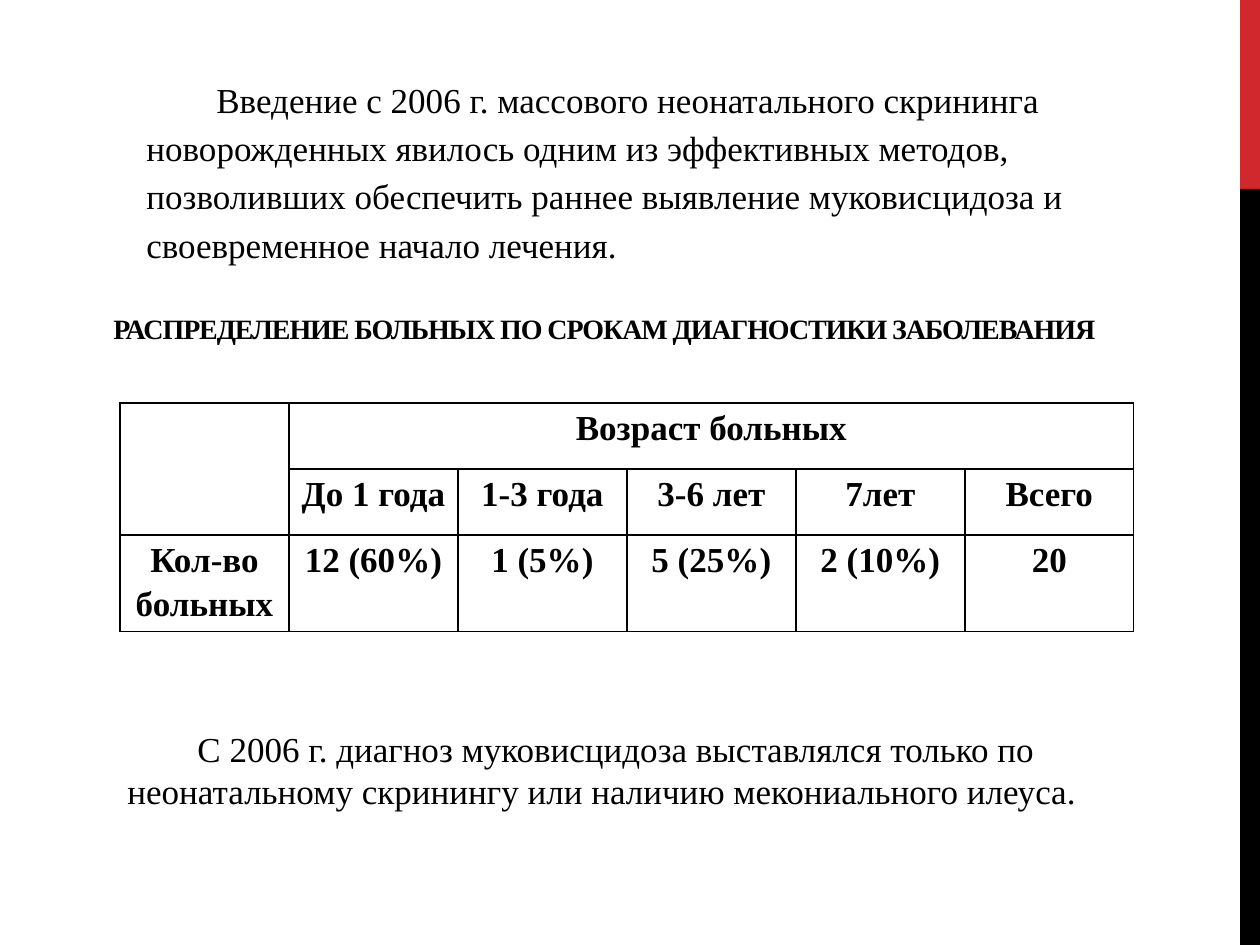
from lxml.etree import SubElement
from pptx import Presentation
from pptx.dml.color import RGBColor
from pptx.enum.shapes import MSO_SHAPE
from pptx.enum.text import PP_ALIGN
from pptx.oxml.ns import qn
from pptx.util import Pt

SCALE = 7257.14  # EMU per px, 126 px to the inch
FONT = "Times New Roman"
BLACK = "000000"
RED = "D1282E"

INTRODUCTION = (
    "Введение с 2006 г. массового неонатального скрининга новорожденных явилось "
    "одним из эффективных методов, позволивших обеспечить раннее выявление "
    "муковисцидоза и своевременное начало лечения."
)
HEADING = "РАСПРЕДЕЛЕНИЕ БОЛЬНЫХ ПО СРОКАМ ДИАГНОСТИКИ ЗАБОЛЕВАНИЯ"
CONCLUSION = (
    "С 2006 г. диагноз муковисцидоза выставлялся только по неонатальному "
    "скринингу или наличию мекониального илеуса."
)
TABLE_ROWS = [
    ["", "Возраст больных", "", "", "", ""],
    ["", "До 1 года", "1-3 года", "3-6 лет", "7лет", "Всего"],
    ["Кол-во больных", "12 (60%)", "1 (5%)", "5 (25%)", "2 (10%)", "20"],
]


def px(length):
    return round(length * SCALE)


def color(value):
    return RGBColor.from_string(value)


def set_attributes(target, values):
    for name, value in values.items():
        setattr(target, name, value)


def write(paragraph, text, size=20, bold=False, **paragraph_format):
    set_attributes(paragraph, paragraph_format)
    run = paragraph.add_run()
    run.text = text
    set_attributes(run.font, {"name": FONT, "size": Pt(size), "bold": bold})
    run.font.color.rgb = color(BLACK)
    return run


def add_bar(slide, top, height, fill):
    shape = slide.shapes.add_shape(
        MSO_SHAPE.RECTANGLE, px(1240), px(top), px(20), px(height))
    shape.shadow.inherit = False
    shape.fill.solid()
    shape.fill.fore_color.rgb = color(fill)
    shape.line.fill.background()


def add_text(slide, box, text, indent=0, inset=6, **text_format):
    shape = slide.shapes.add_textbox(*map(px, box))
    frame = shape.text_frame
    set_attributes(frame, {"word_wrap": True, "margin_top": px(inset)})
    paragraph = frame.paragraphs[0]
    paragraph._p.get_or_add_pPr().set("indent", str(px(indent)))
    return write(paragraph, text, **text_format)


def style_cell(cell):
    """Leave the cell unfilled, with a thin black border on each side."""
    margins = {"margin_left": px(8), "margin_right": px(8),
               "margin_top": 0, "margin_bottom": 0}
    set_attributes(cell, margins)
    properties = cell._tc.get_or_add_tcPr()
    for side in ("a:lnL", "a:lnR", "a:lnT", "a:lnB"):
        line = SubElement(properties, qn(side), w=str(Pt(1)))
        fill = SubElement(line, qn("a:solidFill"))
        SubElement(fill, qn("a:srgbClr"), val=BLACK)
    cell.fill.background()


def add_table(slide, rows):
    row_height, column_width = 66, 169
    row_count, column_count = len(rows), len(rows[0])
    table = slide.shapes.add_table(
        row_count, column_count, px(120), px(403),
        px(column_width * column_count), px(row_height * row_count)).table
    set_attributes(table, {"first_row": False, "horz_banding": False})
    table.cell(0, 0).merge(table.cell(1, 0))
    table.cell(0, 1).merge(table.cell(0, column_count - 1))
    for row, texts in enumerate(rows):
        for column, text in enumerate(texts):
            cell = table.cell(row, column)
            style_cell(cell)
            if text:
                write(cell.text_frame.paragraphs[0], text, bold=True,
                      alignment=PP_ALIGN.CENTER, line_spacing=1.15)


def main():
    presentation = Presentation()
    set_attributes(presentation, {"slide_width": px(1260), "slide_height": px(945)})
    slide = presentation.slides.add_slide(presentation.slide_layouts[6])

    add_bar(slide, 0, 189, RED)
    add_bar(slide, 189, 756, BLACK)
    heading = add_text(slide, (101, 294, 1032, 89), HEADING, inset=18,
                       size=16, bold=True)
    heading.font._element.set("spc", "-60")
    add_text(slide, (134, 66, 1012, 198), INTRODUCTION, indent=70,
             line_spacing=1.15, space_before=Pt(4), space_after=Pt(10))
    add_table(slide, TABLE_ROWS)
    add_text(slide, (115, 721, 1012, 97), CONCLUSION, indent=70)
    presentation.save("out.pptx")


if __name__ == "__main__":
    main()
